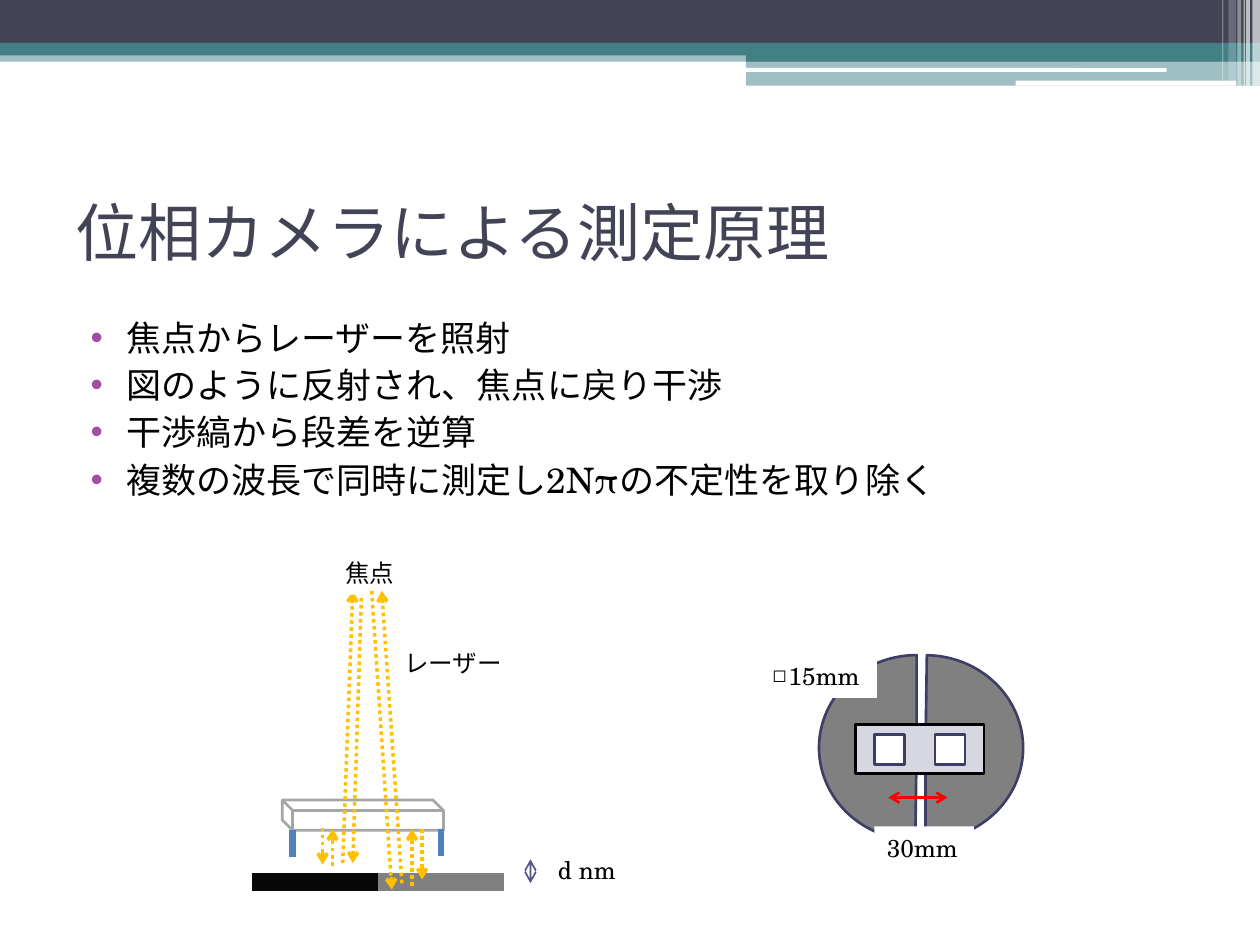
from lxml import etree
from pptx import Presentation
from pptx.dml.color import RGBColor
from pptx.enum.dml import MSO_LINE
from pptx.enum.shapes import MSO_CONNECTOR, MSO_SHAPE
from pptx.enum.text import MSO_ANCHOR, MSO_AUTO_SIZE, PP_ALIGN
from pptx.oxml.ns import qn
from pptx.util import Inches, Pt

RECT = MSO_SHAPE.RECTANGLE
ROUND_RECT = MSO_SHAPE.ROUNDED_RECTANGLE
PIE = MSO_SHAPE.PIE
CUBE = MSO_SHAPE.CUBE
STRAIGHT = MSO_CONNECTOR.STRAIGHT
DOTTED = MSO_LINE.ROUND_DOT

WHITE, BLACK, GRAY = "FFFFFF", "000000", "808080"
NAVY, TEAL, OUTLINE, LASER = "424456", "438086", "3D3E66", "FFC000"
SERIF = "TeX Gyre Schola"

POINTS = [
    "焦点からレーザーを照射",
    "図のように反射され、焦点に戻り干渉",
    "干渉縞から段差を逆算",
    "複数の波長で同時に測定し2Nπの不定性を取り除く",
]
# left, top, width, height, colour, opacity in percent
BANDS = [
    (0, 0.4, 10, 0.09, TEAL, 50),
    (0, 0, 10, 0.34, NAVY, 100),
    (0, 0.34, 10, 0.1, TEAL, 100),
    (5.92, 0.39, 4.08, 0.1, TEAL, 100),
    (5.92, 0.48, 4.08, 0.2, TEAL, 50),
]
BAND_GAPS = [(5.91, 0.54, 3.35, 0.03), (8.06, 0.64, 1.75, 0.04)]
# left, width, height, opacity in percent
CORNER_STRIPES = [
    (9.94, 0.06, 0.68, 65), (9.89, 0.03, 0.68, 65), (9.87, 0.01, 0.68, 60),
    (9.82, 0.03, 0.68, 40), (9.75, 0.06, 0.64, 20), (9.7, 0.01, 0.64, 30),
]
MIRROR_CURVE = [
    (0, 0.27), (0.4, 0.28), (0.52, 0.22), (0.73, 0.18),
    (0.95, 0.13), (1.05, 0.11), (1.27, 0),
]
LEFT_BEAMS = [
    (2.87, 4.69, 2.8, 6.85), (2.64, 6.87, 2.64, 6.58),
    (2.56, 6.57, 2.56, 6.86), (2.72, 6.85, 2.8, 4.69),
]
RIGHT_BEAMS = [
    (2.95, 4.69, 3.11, 7.06), (3.27, 7.03, 3.27, 6.58),
    (3.35, 6.58, 3.35, 6.98), (3.19, 7.01, 3.03, 4.69),
]
LABELS = [
    ("□15mm", 6.02, 5.2, 0.94, 0.34),
    ("d nm", 4.33, 6.74, 1.13, 0.4),
    ("30mm", 6.94, 6.56, 0.79, 0.34),
    ("焦点", 2.64, 4.38, 0.71, 0.34),
    ("レーザー", 3.11, 5.09, 1.1, 0.34),
]


def rgb(value):
    return RGBColor.from_string(value)


def place(item, *box):
    item.left, item.top, item.width, item.height = map(Inches, box)


def paint(shape, fill=None, line=None, width=1.5, opacity=100):
    shape.shadow.inherit = False
    if fill:
        shape.fill.solid()
        shape.fill.fore_color.rgb = rgb(fill)
        if opacity < 100:
            color = shape.fill._xPr.find(".//" + qn("a:srgbClr"))
            etree.SubElement(color, qn("a:alpha"), val=str(opacity * 1000))
    else:
        shape.fill.background()
    if line:
        shape.line.color.rgb = rgb(line)
        shape.line.width = Pt(width)
    else:
        shape.line.fill.background()


def add_preset(slide, kind, box, **look):
    shape = slide.shapes.add_shape(kind, *map(Inches, box))
    paint(shape, **look)
    return shape


def add_line(slide, ends, color, width, dash=None, arrows=()):
    """arrows holds any of headEnd and tailEnd, in that order."""
    connector = slide.shapes.add_connector(STRAIGHT, *map(Inches, ends))
    connector.line.color.rgb = rgb(color)
    connector.line.width = Pt(width)
    if dash:
        connector.line.dash_style = dash
    properties = connector._element.spPr
    for end in arrows:
        etree.SubElement(properties.find(qn("a:ln")), qn("a:" + end), type="arrow")
    etree.SubElement(properties, qn("a:effectLst"))


def bezier(start, control1, control2, end, steps=10):
    """Points along a cubic curve, without its start."""
    for step in range(1, steps + 1):
        t = step / steps
        weights = ((1 - t) ** 3, 3 * t * (1 - t) ** 2, 3 * t * t * (1 - t), t ** 3)
        yield tuple(
            sum(w * p[axis] for w, p in zip(weights, (start, control1, control2, end)))
            for axis in (0, 1)
        )


def add_mirror(slide, inner_x, top, direction, color):
    """Curved mirror that rises outwards from inner_x; direction is 1 or -1."""
    nodes = [(inner_x + direction * x, top + y) for x, y in MIRROR_CURVE]
    curve = [*bezier(*nodes[:4]), *bezier(*nodes[3:])]
    builder = slide.shapes.build_freeform(*nodes[0], scale=Inches(1))
    builder.add_line_segments(curve, close=False)
    paint(builder.convert_to_shape(), line=color, width=10)


def add_label(slide, text, *box):
    label = slide.shapes.add_textbox(*map(Inches, box))
    label.fill.solid()
    label.fill.fore_color.rgb = rgb(WHITE)
    label.text_frame.word_wrap = True
    paragraph = label.text_frame.paragraphs[0]
    paragraph.text = text
    set_font(paragraph, SERIF, 14, BLACK)


def set_font(paragraph, name, size, color):
    paragraph.font.name = name
    paragraph.font.size = Pt(size)
    paragraph.font.color.rgb = rgb(color)


def add_bullet(paragraph, color):
    properties = paragraph._p.get_or_add_pPr()
    properties.set("marL", str(Inches(0.4)))
    properties.set("indent", str(Inches(-0.28)))
    bullet_color = etree.Element(qn("a:buClr"))
    etree.SubElement(bullet_color, qn("a:srgbClr"), val=color)
    font = etree.Element(qn("a:buFont"), typeface="Arial")
    bullet = etree.Element(qn("a:buChar"), char="•")
    at = 1 if properties.find(qn("a:spcBef")) is not None else 0
    properties[at:at] = [bullet_color, font, bullet]


def fill_placeholders(slide):
    title, body = slide.placeholders
    place(title, 0.5, 1.25, 6.86, 1.17)
    title.text_frame.text = "位相カメラによる測定原理"
    title.text_frame.vertical_anchor = MSO_ANCHOR.MIDDLE
    heading = title.text_frame.paragraphs[0]
    heading.alignment = PP_ALIGN.LEFT
    set_font(heading, "Lato", 36, NAVY)

    place(body, 0.5, 2.46, 7.33, 1.76)
    body.text_frame.text = "\n".join(POINTS)
    for frame in (title.text_frame, body.text_frame):
        frame.auto_size = MSO_AUTO_SIZE.NONE
    for paragraph in body.text_frame.paragraphs:
        paragraph.space_before = Pt(3)
        set_font(paragraph, SERIF, 20, BLACK)
        add_bullet(paragraph, "A04DA3")


def draw_header(slide):
    for *box, color, opacity in BANDS:
        add_preset(slide, RECT, box, fill=color, opacity=opacity)
    for box in BAND_GAPS:
        add_preset(slide, ROUND_RECT, box, fill=WHITE)
    for left, width, height, opacity in CORNER_STRIPES:
        add_preset(slide, RECT, (left, 0, width, height), fill=WHITE, opacity=opacity)


def draw_top_view(slide):
    for left, rotation in ((6.57, 180), (6.5, 0)):
        half = add_preset(slide, PIE, (left, 5.2, 1.55, 1.47), fill=GRAY, line=OUTLINE)
        half.adjustments[0], half.adjustments[1] = 54.505, 162
        half.rotation = rotation
    add_preset(slide, RECT, (6.79, 5.75, 1.02, 0.39), fill="D6D7E0", line=BLACK)
    for left in (6.94, 7.42):
        add_preset(slide, RECT, (left, 5.83, 0.24, 0.24), fill=WHITE, line=OUTLINE)


def draw_side_view(slide):
    add_mirror(slide, 2.84, 6.82, 1, GRAY)
    add_mirror(slide, 2.8, 6.66, -1, "080808")
    plate = add_preset(slide, CUBE, (2.24, 6.35, 1.28, 0.24), line="A6A6A6", width=1.54)
    plate.adjustments[0] = 0.344
    plate._element.spPr.find(qn("a:xfrm")).set("flipH", "1")
    for x, top in ((2.32, 6.59), (3.5, 6.58)):
        add_line(slide, (x, top, x, top + 0.21), "4F81BD", 3.75)


def draw_beams(slide, beams):
    for ends in beams:
        add_line(slide, ends, LASER, 2, DOTTED, ["tailEnd"])


def main():
    deck = Presentation()
    deck.slide_width, deck.slide_height = Inches(10), Inches(7.5)
    slide = deck.slides.add_slide(deck.slide_layouts.get_by_name("Title and Content"))
    both_ends = ["headEnd", "tailEnd"]
    fill_placeholders(slide)
    draw_header(slide)
    draw_top_view(slide)
    draw_side_view(slide)
    draw_beams(slide, LEFT_BEAMS)
    for label in LABELS:
        add_label(slide, *label)
    add_line(slide, (4.21, 6.82, 4.21, 7.01), "53548A", 1, arrows=both_ends)
    add_line(slide, (7.05, 6.33, 7.52, 6.33), "FF0000", 1.5, arrows=both_ends)
    draw_beams(slide, RIGHT_BEAMS)
    deck.save("out.pptx")


if __name__ == "__main__":
    main()
